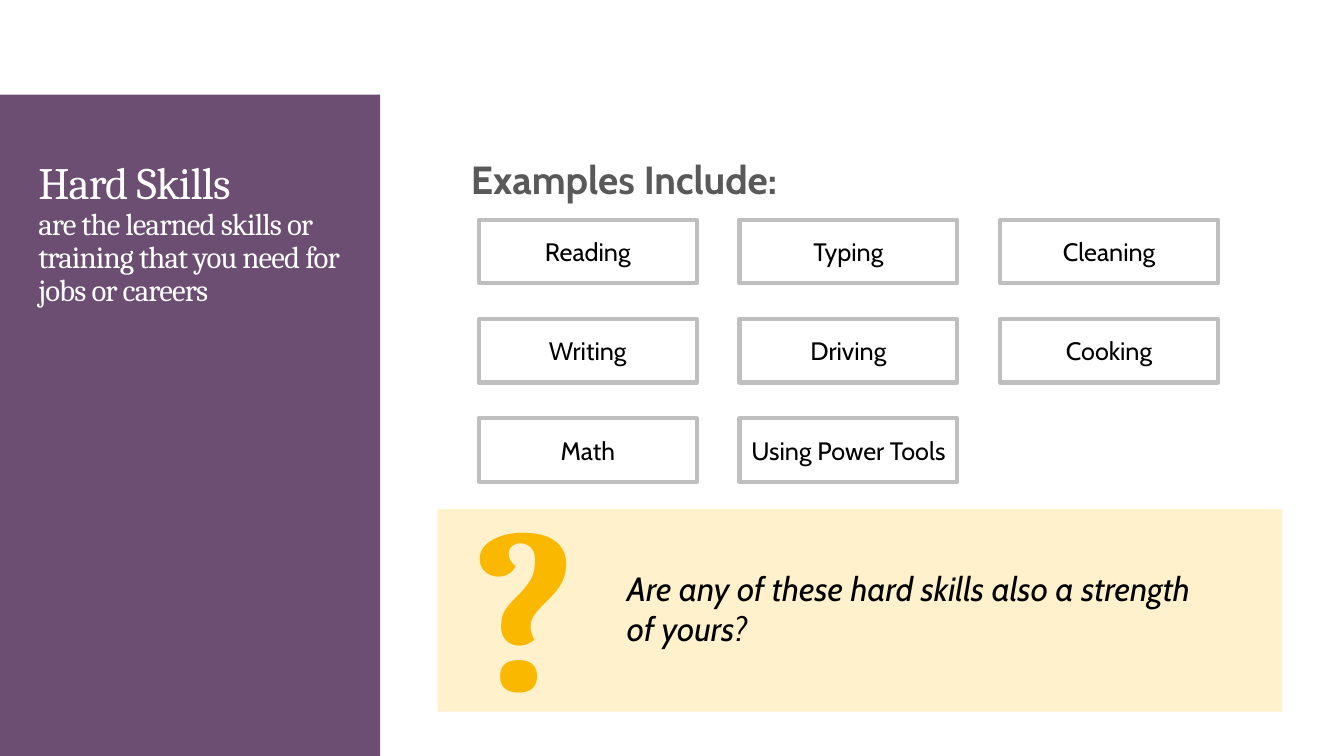
from pptx import Presentation
from pptx.dml.color import RGBColor
from pptx.enum import shapes, text
from pptx.oxml import xmlchemy
from pptx.util import Inches, Pt

HEADING_FONT, BODY_FONT = "Cambria", "Cabin"
PURPLE, WHITE, BLACK = "6B4E71", "FFFFFF", "000000"
HEADING_GREY, BORDER_GREY = "595959", "BFBFBF"
CREAM, AMBER = "FFF1CB", "FAB900"

SKILL_COLUMNS = (
    ("Reading", "Writing", "Math"),
    ("Typing", "Driving", "Using Power Tools"),
    ("Cleaning", "Cooking"),
)


def color(hex_string):
    return RGBColor.from_string(hex_string)


def place(shape, left, top, width, height):
    box = dict(left=left, top=top, width=width, height=height)
    for name, value in box.items():
        setattr(shape, name, Inches(value))


def format_font(font, hex_color, **values):
    """Set the font colour and any further font attributes, size in points."""
    values["size"] = Pt(values["size"])
    for name, value in values.items():
        setattr(font, name, value)
    font.color.rgb = color(hex_color)


def format_frame(frame, anchor=text.MSO_ANCHOR.TOP):
    values = dict(word_wrap=True, auto_size=text.MSO_AUTO_SIZE.NONE,
                  vertical_anchor=anchor)
    for name, value in values.items():
        setattr(frame, name, value)


def format_paragraph(paragraph, **values):
    for name, value in values.items():
        setattr(paragraph, name, value)


def add_rectangle(slide, box, fill=None, line=None):
    shape = slide.shapes.add_shape(shapes.MSO_SHAPE.RECTANGLE,
                                   *[Inches(value) for value in box])
    shape.shadow.inherit = False
    if fill:
        shape.fill.solid()
        shape.fill.fore_color.rgb = color(fill)
    else:
        shape.fill.background()
    if line:
        shape.line.color.rgb = color(line)
        shape.line.width = Pt(3)
    else:
        shape.line.fill.background()
    return shape


def add_text(slide, box, wording, hex_color, **font_values):
    text_box = slide.shapes.add_textbox(*[Inches(value) for value in box])
    format_frame(text_box.text_frame)
    paragraph = text_box.text_frame.paragraphs[0]
    run = paragraph.add_run()
    run.text = wording
    format_font(run.font, hex_color, **font_values)


def add_side_panel(slide):
    """Put the purple panel behind the placeholders."""
    panel = add_rectangle(slide, (0, 0.94, 3.77, 6.56), fill=PURPLE)
    slide.shapes._spTree.insert(2, panel._element)


def fill_title(title):
    place(title, 0.28, 1.54, 3.22, 5.53)
    format_frame(title.text_frame)
    paragraph = title.text_frame.paragraphs[0]
    format_paragraph(paragraph, alignment=text.PP_ALIGN.LEFT, line_spacing=0.9)
    term = paragraph.add_run()
    term.text = "Hard Skills"
    paragraph.add_line_break()
    definition = paragraph.add_run()
    definition.text = ("are the learned skills or training that you need "
                       "for jobs or careers")
    for run, size in ((term, 32), (definition, 22)):
        format_font(run.font, WHITE, name=HEADING_FONT, size=size)
        run.font._element.set("spc", "-60")


def fill_examples_heading(body):
    place(body, 4.57, 1.54, 8, 0.73)
    format_frame(body.text_frame)
    paragraph = body.text_frame.paragraphs[0]
    format_paragraph(paragraph, line_spacing=0.9, space_before=Pt(0))
    properties = paragraph._element.get_or_add_pPr()
    properties.set("marL", "0")
    properties.set("indent", "0")
    properties.append(xmlchemy.OxmlElement("a:buNone"))
    run = paragraph.add_run()
    run.text = "Examples Include:"
    format_font(run.font, HEADING_GREY, name=BODY_FONT, size=28, bold=True)


def add_skill(slide, left, top, skill):
    shape = add_rectangle(slide, (left, top, 2.16, 0.63), line=BORDER_GREY)
    format_frame(shape.text_frame, text.MSO_ANCHOR.MIDDLE)
    paragraph = shape.text_frame.paragraphs[0]
    paragraph.alignment = text.PP_ALIGN.CENTER
    run = paragraph.add_run()
    run.text = skill
    format_font(run.font, BLACK, name=BODY_FONT, size=18)


def add_skill_grid(slide):
    for column, skills in enumerate(SKILL_COLUMNS):
        for row, skill in enumerate(skills):
            add_skill(slide, 4.75 + 2.585 * column, 2.18 + 0.985 * row, skill)


def add_question(slide):
    add_rectangle(slide, (4.34, 5.05, 8.38, 2.01), fill=CREAM)
    add_text(slide, (4.59, 4.5, 1.28, 2.89), "?", AMBER,
             name=HEADING_FONT, size=166, bold=True)
    add_text(slide, (6.12, 5.58, 6.05, 1.21),
             "Are any of these hard skills also a strength of yours?", BLACK,
             name=BODY_FONT, size=24, italic=True)


def main():
    presentation = Presentation()
    presentation.slide_width = Inches(13.33)
    presentation.slide_height = Inches(7.5)
    slide = presentation.slides.add_slide(presentation.slide_layouts[1])
    add_side_panel(slide)
    fill_title(slide.shapes.title)
    fill_examples_heading(slide.placeholders[1])
    add_skill_grid(slide)
    add_question(slide)
    presentation.save("out.pptx")


if __name__ == "__main__":
    main()
